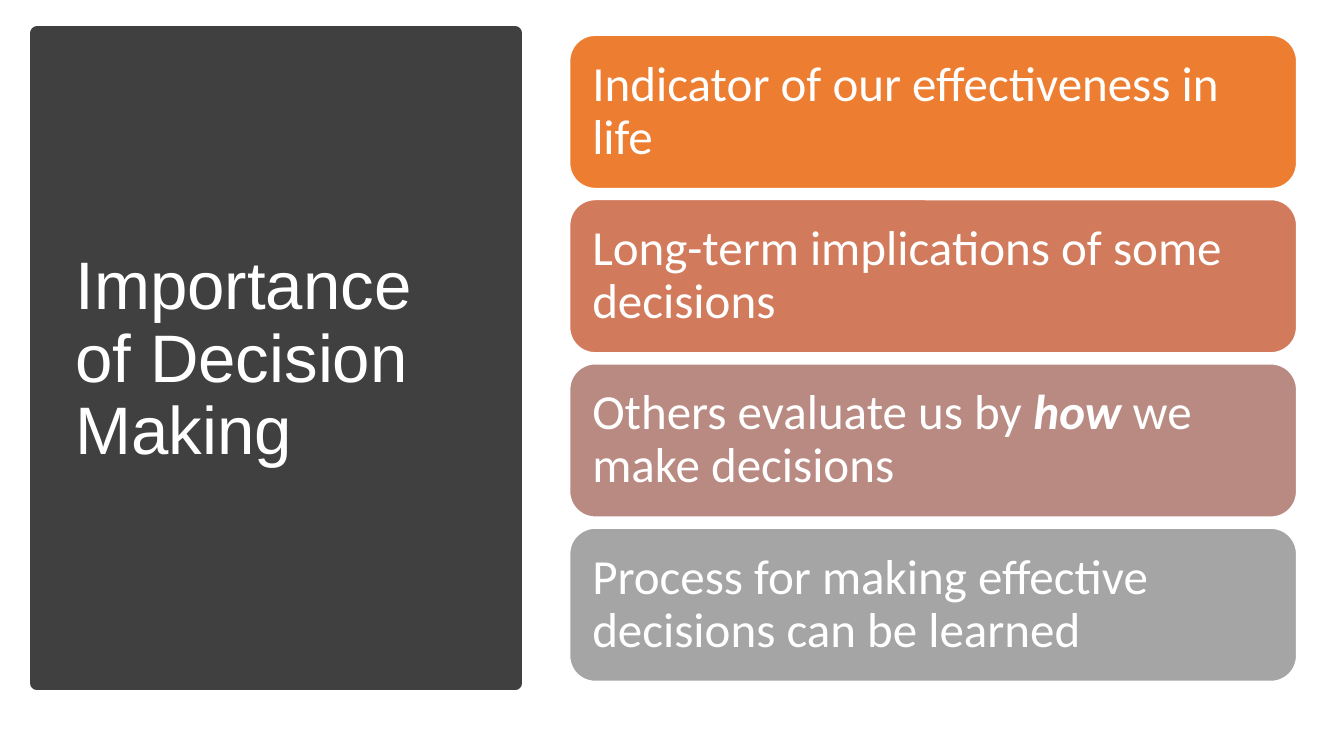
import dataclasses

import pptx
import pptx.dml.color
import pptx.enum.shapes
import pptx.enum.text
import pptx.util

Inches = pptx.util.Inches
Pt = pptx.util.Pt
ShapeKind = pptx.enum.shapes.MSO_SHAPE


def rgb(code):
    return pptx.dml.color.RGBColor.from_string(code)


@dataclasses.dataclass(frozen=True)
class Theme:
    panel: str = "404040"
    white: str = "FFFFFF"
    cards: tuple = ("ED7D31", "D17B5C", "B98A82", "A5A5A5")
    title_font: str = "Arial"
    card_font: str = "Calibri"
    title_size: int = 48
    card_size: int = 35


class SlideBuilder:
    def __init__(self, slide, theme):
        self.slide = slide
        self.theme = theme

    def block(self, kind, box, fill, line, line_width):
        block = self.slide.shapes.add_shape(kind, *map(Inches, box))
        block.shadow.inherit = False
        block.fill.solid()
        block.fill.fore_color.rgb = rgb(fill)
        block.line.color.rgb = rgb(line)
        block.line.width = Pt(line_width)
        return block

    def set_text(self, frame, runs, font, size, inset):
        """Fill a frame with (text, emphasised) runs, left aligned and centred vertically."""
        frame_format = {
            "word_wrap": True,
            "vertical_anchor": pptx.enum.text.MSO_ANCHOR.MIDDLE,
            **{f"margin_{side}": Inches(inset) for side in ("left", "top", "right", "bottom")},
        }
        for name, value in frame_format.items():
            setattr(frame, name, value)
        paragraph = frame.paragraphs[0]
        paragraph.alignment = pptx.enum.text.PP_ALIGN.LEFT
        paragraph.line_spacing = 0.9
        for text, emphasised in runs:
            run = paragraph.add_run()
            run.text = text
            font_format = {"name": font, "size": Pt(size), "bold": emphasised, "italic": emphasised}
            for name, value in font_format.items():
                setattr(run.font, name, value)
            run.font.color.rgb = rgb(self.theme.white)

    def panel(self, box):
        self.block(ShapeKind.RECTANGLE, box, self.theme.panel, self.theme.panel, 10)

    def title(self, text, box):
        title = self.slide.shapes.add_textbox(*map(Inches, box))
        self.set_text(title.text_frame, [(text, False)],
                      self.theme.title_font, self.theme.title_size, 0.1)

    def card(self, runs, box, fill):
        card = self.block(ShapeKind.ROUNDED_RECTANGLE, box, fill, self.theme.white, 1)
        self.set_text(card.text_frame, runs, self.theme.card_font, self.theme.card_size, 0.15)


REASONS = [
    [("Indicator of our effectiveness in life", False)],
    [("Long-term implications of some decisions", False)],
    [("Others evaluate us by ", False), ("how", True), (" we make decisions", False)],
    [("Process for making effective decisions can be learned", False)],
]
CARD_LEFT, CARD_TOP, CARD_WIDTH, CARD_HEIGHT = 5.65, 0.35, 7.21, 1.52
CARD_PITCH = 1.63


def main():
    presentation = pptx.Presentation()
    presentation.slide_width = Inches(13.33)
    presentation.slide_height = Inches(7.5)
    theme = Theme()
    builder = SlideBuilder(presentation.slides.add_slide(presentation.slide_layouts[6]), theme)

    builder.panel((0.37, 0.33, 4.74, 6.45))
    builder.title("Importance of Decision Making", (0.65, 0.7, 4.16, 5.75))
    for row, (reason, fill) in enumerate(zip(REASONS, theme.cards)):
        top = CARD_TOP + row * CARD_PITCH
        builder.card(reason, (CARD_LEFT, top, CARD_WIDTH, CARD_HEIGHT), fill)

    presentation.save("out.pptx")


if __name__ == "__main__":
    main()
